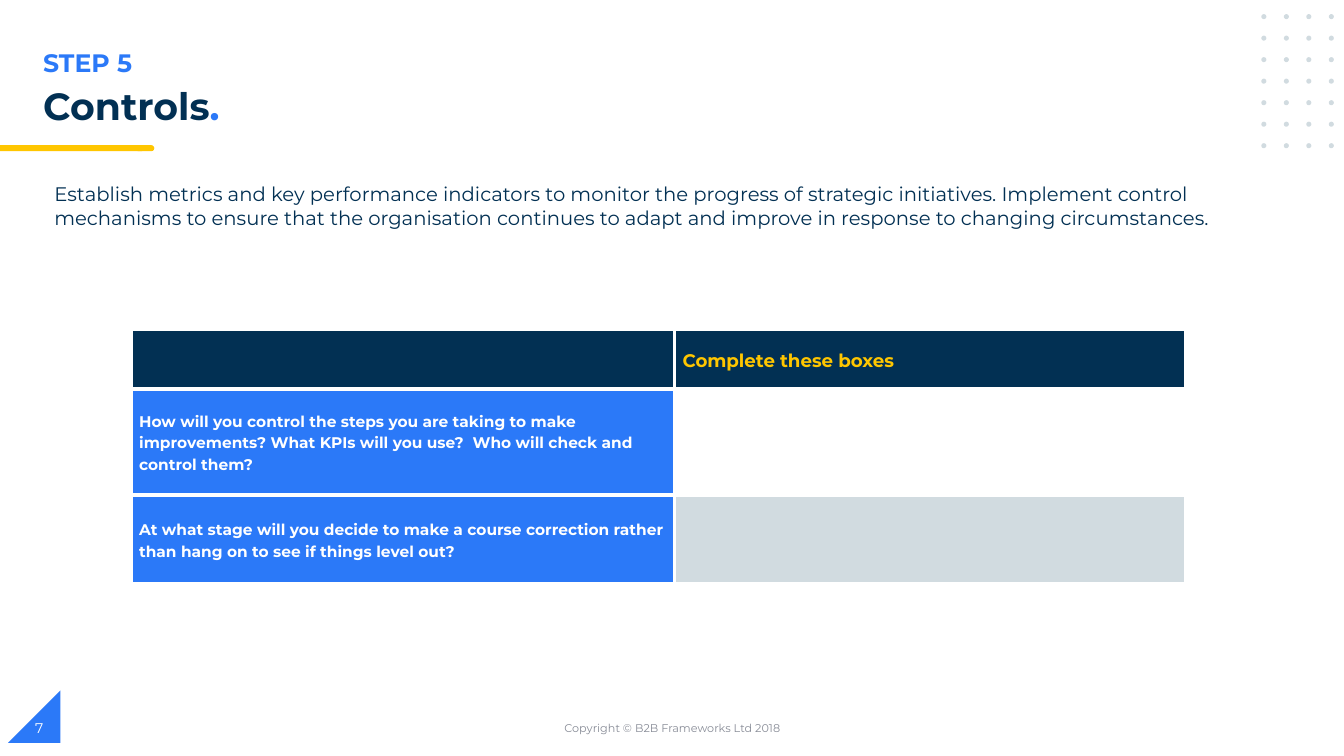
"""Build the Step 5 Controls slide with its worksheet table."""
import itertools

import lxml.etree
import pptx
import pptx.chart.data
import pptx.dml.color
import pptx.enum.shapes
import pptx.enum.text
import pptx.oxml.ns
import pptx.util

Inches = pptx.util.Inches
RGBColor = pptx.dml.color.RGBColor
Shape = pptx.enum.shapes.MSO_SHAPE
Align = pptx.enum.text.PP_ALIGN
Anchor = pptx.enum.text.MSO_ANCHOR

NAVY = RGBColor(0x02, 0x30, 0x53)
BLUE = RGBColor(0x2B, 0x79, 0xF8)
YELLOW = RGBColor(0xFF, 0xC6, 0x00)
PALE = RGBColor(0xD1, 0xDB, 0xE0)
GREY = RGBColor(0x88, 0x8C, 0x97)
WHITE = RGBColor(0xFF, 0xFF, 0xFF)
FONT = "Montserrat"

SLIDE_SIZE = (13.33, 7.5)
FOOTER_TOP, FOOTER_HEIGHT = 7.02, 0.4
DOT_COLUMNS, DOT_ROWS, DOT_SIZE = 4, 7, 0.05
DOT_ORIGIN, DOT_STEP = (12.51, 0.14), (0.223, 0.2135)

SHAPES = [
    (Shape.RIGHT_TRIANGLE, (0.08, 6.85, 0.52, 0.52), BLUE),
    (Shape.FLOWCHART_TERMINATOR, (1.34, 1.44, 0.19, 0.06), YELLOW),
    (Shape.RECTANGLE, (0, 1.44, 1.41, 0.06), YELLOW),
]
TEXTS = [
    ([("STEP 5", BLUE)], (0.33, 0.42, 6.69, 0.4), 18, True, Align.LEFT, Anchor.TOP, 1),
    ([("Controls", NAVY), (".", BLUE)], (0.33, 0.82, 11.44, 0.56), 27, True,
     Align.LEFT, Anchor.TOP, 0.9),
    ([("Establish metrics and key performance indicators to monitor the progress of "
       "strategic initiatives. Implement control mechanisms to ensure that the "
       "organisation continues to adapt and improve in response to changing "
       "circumstances.", NAVY)],
     (0.44, 1.76, 11.71, 0.57), 14, False, Align.LEFT, Anchor.TOP, 1),
    ([("Copyright © B2B Frameworks Ltd 2018", GREY)],
     (4.42, FOOTER_TOP, 4.5, FOOTER_HEIGHT), 8, False, Align.CENTER, Anchor.MIDDLE, 1),
    ([("7", WHITE)], (0.25, FOOTER_TOP, 3, FOOTER_HEIGHT), 10, False,
     Align.LEFT, Anchor.MIDDLE, 1),
]
TABLE_ORIGIN = (1.3, 3.27)
COLUMN_WIDTHS = (5.39, 5.07)
ROW_HEIGHTS = (0.59, 1.05, 0.88)
BORDER_POINTS = 3
TABLE_ROWS = [
    [("", NAVY), ("Complete these boxes", NAVY)],
    [("How will you control the steps you are taking to make improvements? "
      "What KPIs will you use?  Who will check and control them?", BLUE), ("", WHITE)],
    [("At what stage will you decide to make a course correction rather than hang on "
      "to see if things level out?", BLUE), ("", PALE)],
]


def add_filled_shape(slide, kind, box, color):
    shape = slide.shapes.add_shape(kind, *map(Inches, box))
    shape.shadow.inherit = False
    shape.fill.solid()
    shape.fill.fore_color.rgb = color
    shape.line.fill.background()
    return shape


def set_font(font, size, bold):
    font.name, font.size, font.bold = FONT, pptx.util.Pt(size), bold


def add_text(slide, runs, box, size, bold, alignment, anchor, spacing):
    frame = slide.shapes.add_textbox(*map(Inches, box)).text_frame
    frame.word_wrap = True
    frame.vertical_anchor = anchor
    paragraph = frame.paragraphs[0]
    paragraph.alignment = alignment
    paragraph.line_spacing = spacing
    set_font(paragraph.font, size, bold)
    for text, color in runs:
        run = paragraph.add_run()
        run.text = text
        run.font.color.rgb = color


def add_borders(cell):
    qn = pptx.oxml.ns.qn
    properties = cell._tc.get_or_add_tcPr()
    for side in ("lnL", "lnR", "lnT", "lnB"):
        line = lxml.etree.SubElement(properties, qn(f"a:{side}"),
                                     w=str(pptx.util.Pt(BORDER_POINTS)))
        fill = lxml.etree.SubElement(line, qn("a:solidFill"))
        lxml.etree.SubElement(fill, qn("a:srgbClr"), val=str(WHITE))


def add_worksheet(slide):
    size = (sum(COLUMN_WIDTHS), sum(ROW_HEIGHTS))
    table = slide.shapes.add_table(len(ROW_HEIGHTS), len(COLUMN_WIDTHS),
                                   *map(Inches, TABLE_ORIGIN + size)).table
    for column, width in zip(table.columns, COLUMN_WIDTHS):
        column.width = Inches(width)
    for index, (row, height, contents) in enumerate(
            zip(table.rows, ROW_HEIGHTS, TABLE_ROWS)):
        row.height = Inches(height)
        for cell, (text, color) in zip(row.cells, contents):
            add_borders(cell)
            cell.fill.solid()
            cell.fill.fore_color.rgb = color
            cell.vertical_anchor = Anchor.MIDDLE
            cell.margin_left = cell.margin_right = Inches(0.08)
            cell.margin_top = cell.margin_bottom = 0
            cell.text = text
            paragraph = cell.text_frame.paragraphs[0]
            paragraph.line_spacing = 1.15
            set_font(paragraph.font, 11 if index else 13, True)
            paragraph.font.color.rgb = WHITE if index else YELLOW


def main():
    presentation = pptx.Presentation()
    presentation.slide_width, presentation.slide_height = map(Inches, SLIDE_SIZE)
    slide = presentation.slides.add_slide(presentation.slide_layouts[6])
    for kind, box, color in SHAPES:
        shape = add_filled_shape(slide, kind, box, color)
        if kind == Shape.RIGHT_TRIANGLE:
            shape._element.spPr.xfrm.set("flipH", "1")
    for row, column in itertools.product(range(DOT_ROWS), range(DOT_COLUMNS)):
        left = DOT_ORIGIN[0] + column * DOT_STEP[0]
        top = DOT_ORIGIN[1] + row * DOT_STEP[1]
        add_filled_shape(slide, Shape.OVAL, (left, top, DOT_SIZE, DOT_SIZE), PALE)
    for text in TEXTS:
        add_text(slide, *text)
    add_worksheet(slide)
    presentation.save("out.pptx")


if __name__ == "__main__":
    main()
